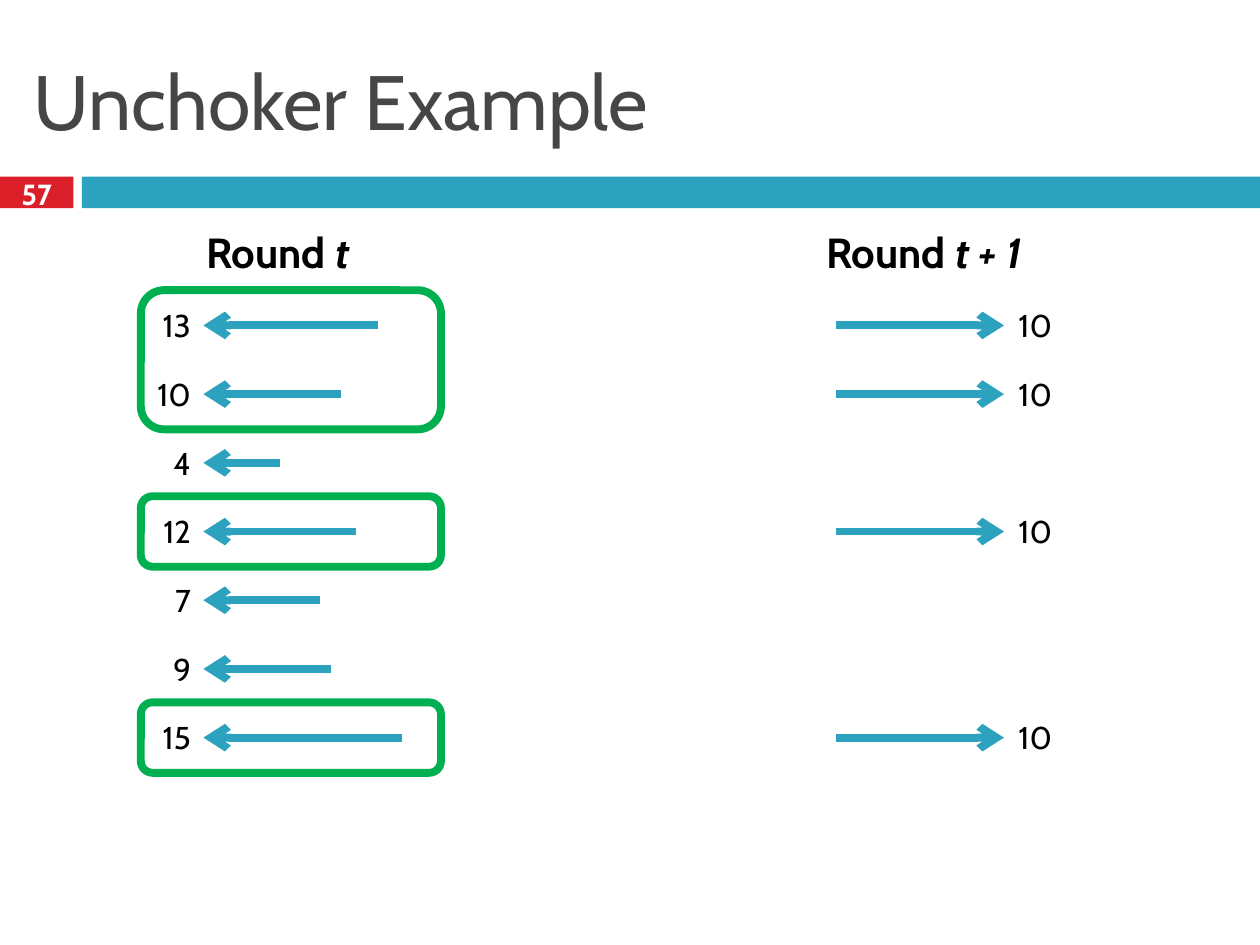
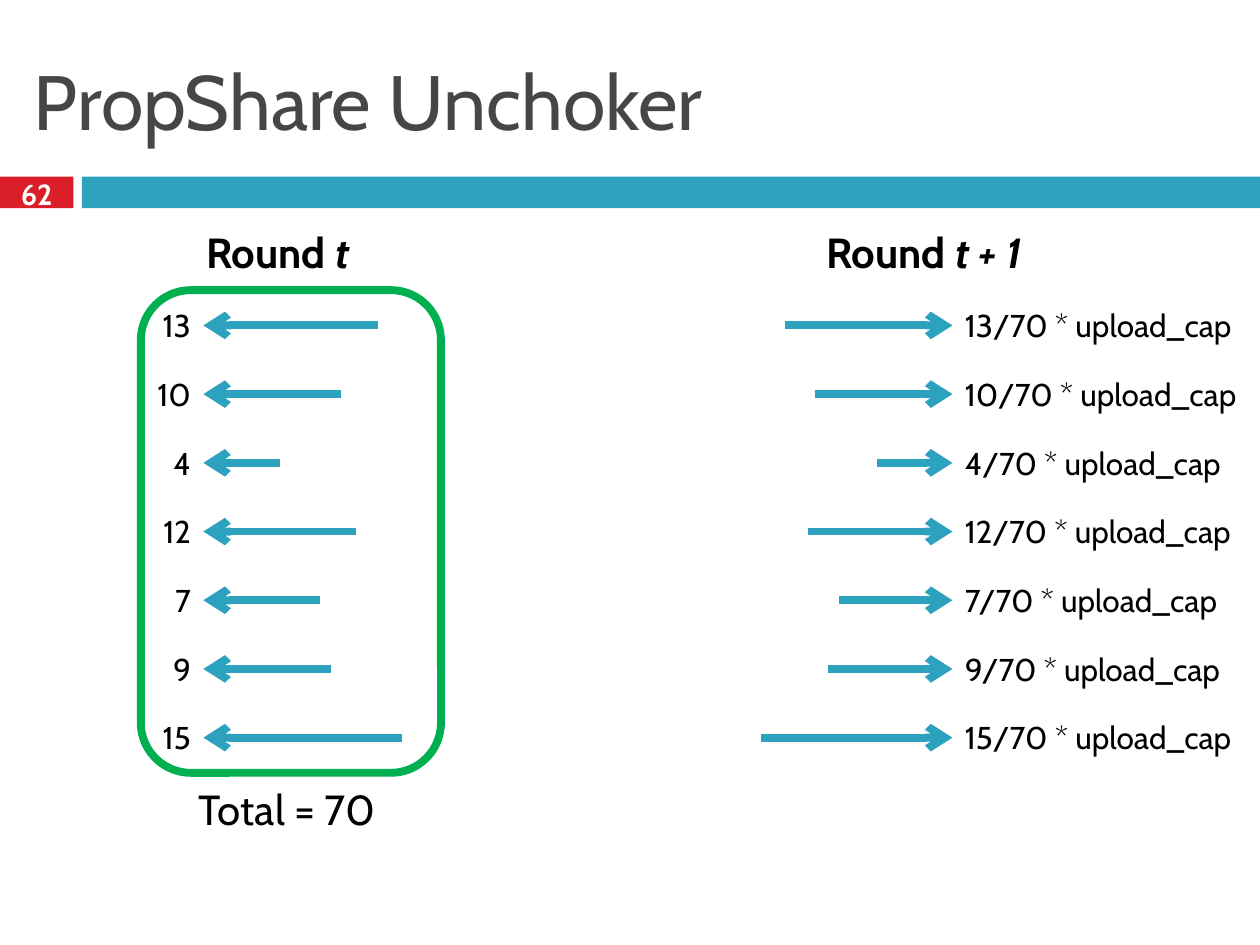
from pptx import Presentation
from pptx.dml.color import RGBColor
from pptx.enum.shapes import MSO_CONNECTOR, MSO_SHAPE
from pptx.enum.text import MSO_ANCHOR, MSO_AUTO_SIZE, PP_ALIGN
from pptx.oxml.ns import qn
from pptx.oxml.xmlchemy import OxmlElement
from pptx.util import Cm, Pt

FONT = "Cabin"
COLORS = {
    "title": "464646",
    "text": "000000",
    "page": "FFFFFF",
    "number_band": "DA1F28",
    "band": "2DA2BF",
    "arrow": "2DA2BF",
    "frame": "00B050",
}

# Received rate of each peer: (incoming, proportional reply) arrow lengths in cm
PEERS = {
    13: (3.53, 3.38),
    10: (2.77, 2.77),
    4: (1.55, 1.52),
    12: (3.07, 2.92),
    7: (2.36, 2.29),
    9: (2.57, 2.51),
    15: (4.01, 3.86),
}
TOTAL = sum(PEERS)
UNCHOKED_ROWS = (0, 1, 3, 6)
EQUAL_RATE = 10
EQUAL_LENGTH = 3.38

FIRST_ROW, ROW_PITCH = 6.56, 1.385
LABEL_HEIGHT = 1.02
INCOMING_EDGE = 4.1
FRAME_LEFT, FRAME_WIDTH, FRAME_MARGIN = 2.84, 6.05, 0.71
BAND_TOP, BAND_HEIGHT, NUMBER_WIDTH = 3.56, 0.64, 1.48


def color(name):
    return RGBColor.from_string(COLORS[name])


def row_y(row):
    return FIRST_ROW + row * ROW_PITCH


def number_width(number):
    return 1.22 if number >= 10 else 0.86


def add_run(paragraph, text, size, color_name="text", bold=False, italic=False):
    run = paragraph.add_run()
    run.text = text
    run.font.name = FONT
    run.font.size = Pt(size)
    run.font.bold = bold
    run.font.italic = italic
    run.font.color.rgb = color(color_name)


def add_label(slide, left, top, width, height, align=PP_ALIGN.LEFT):
    """Add an empty one-line text box; return it with its paragraph."""
    label = slide.shapes.add_textbox(Cm(left), Cm(top), Cm(width), Cm(height))
    label.text_frame.word_wrap = False
    label.text_frame.auto_size = MSO_AUTO_SIZE.SHAPE_TO_FIT_TEXT
    paragraph = label.text_frame.paragraphs[0]
    paragraph.alignment = align
    return label, paragraph


def add_band(slide, left, width, color_name):
    band = slide.shapes.add_shape(
        MSO_SHAPE.RECTANGLE, Cm(left), Cm(BAND_TOP), Cm(width), Cm(BAND_HEIGHT))
    band.shadow.inherit = False
    band.fill.solid()
    band.fill.fore_color.rgb = color(color_name)
    band.line.fill.background()


def add_page_number(slide, number):
    box, paragraph = add_label(slide, 0, 3.48, NUMBER_WIDTH, 0.84, PP_ALIGN.CENTER)
    frame = box.text_frame
    frame.auto_size = MSO_AUTO_SIZE.NONE
    frame.word_wrap = True
    frame.vertical_anchor = MSO_ANCHOR.MIDDLE
    frame.margin_left = frame.margin_right = 0
    frame.margin_top = frame.margin_bottom = 0
    add_run(paragraph, str(number), 16.6, "page", bold=True)


def add_title(slide, text):
    title = slide.shapes.title
    title.left, title.top = Cm(0.43), Cm(0.64)
    title.width, title.height = Cm(24.56), Cm(2.74)
    title.text_frame.auto_size = MSO_AUTO_SIZE.NONE
    title.text_frame.vertical_anchor = MSO_ANCHOR.MIDDLE
    paragraph = title.text_frame.paragraphs[0]
    paragraph.alignment = PP_ALIGN.LEFT
    add_run(paragraph, text, 44, "title")


def add_round_heading(slide, left, width, round_name):
    _, paragraph = add_label(slide, left, 4.45, width, 1.27)
    add_run(paragraph, "Round ", 24, bold=True)
    add_run(paragraph, round_name, 24, bold=True, italic=True)


def add_rate(slide, row, left, width, text, align):
    rate, paragraph = add_label(
        slide, left, row_y(row) - LABEL_HEIGHT / 2, width, LABEL_HEIGHT, align)
    add_run(paragraph, text, 18)
    return rate


def add_arrow(slide, row, start, end, rate, side):
    """Draw a horizontal arrow that ends at the given side of the rate label."""
    y = Cm(row_y(row))
    arrow = slide.shapes.add_connector(MSO_CONNECTOR.STRAIGHT, Cm(start), y, Cm(end), y)
    arrow.end_connect(rate, side)
    arrow.line.color.rgb = color("arrow")
    arrow.line.width = Pt(4.5)
    properties = arrow._element.spPr
    head = OxmlElement("a:tailEnd")
    head.set("type", "arrow")
    properties.find(qn("a:ln")).append(head)
    properties.append(OxmlElement("a:effectLst"))


def add_incoming(slide, row, number, length):
    width = number_width(number)
    rate = add_rate(slide, row, INCOMING_EDGE - width, width, str(number), PP_ALIGN.RIGHT)
    add_arrow(slide, row, INCOMING_EDGE + length, INCOMING_EDGE, rate, 3)


def add_outgoing(slide, row, edge, length, text, width, align):
    rate = add_rate(slide, row, edge, width, text, align)
    add_arrow(slide, row, edge - length, edge, rate, 1)


def add_frame(slide, first_row, last_row):
    """Outline the selected peers from first_row to last_row."""
    top = row_y(first_row) - FRAME_MARGIN
    height = row_y(last_row) + FRAME_MARGIN - top
    frame = slide.shapes.add_shape(
        MSO_SHAPE.ROUNDED_RECTANGLE,
        Cm(FRAME_LEFT), Cm(top), Cm(FRAME_WIDTH), Cm(height))
    frame.shadow.inherit = False
    frame.fill.background()
    frame.line.color.rgb = color("frame")
    frame.line.width = Pt(4.5)


def add_rounds_slide(prs, title, number):
    """Add a slide with bands, title, both round headings and incoming rates."""
    slide = prs.slides.add_slide(prs.slide_layouts[5])
    add_band(slide, 0, NUMBER_WIDTH, "number_band")
    add_band(slide, 1.65, 23.75, "band")
    add_title(slide, title)
    add_page_number(slide, number)
    add_round_heading(slide, 3.91, 3.73, "t")
    add_round_heading(slide, 16.41, 5.18, "t + 1")
    for row, (rate, (length, _)) in enumerate(PEERS.items()):
        add_incoming(slide, row, rate, length)
    return slide


def build_equal_unchoker(prs):
    slide = add_rounds_slide(prs, "Unchoker Example", 57)
    for first_row, last_row in ((0, 1), (3, 3), (6, 6)):
        add_frame(slide, first_row, last_row)
    for row in UNCHOKED_ROWS:
        add_outgoing(slide, row, 20.24, EQUAL_LENGTH, str(EQUAL_RATE),
                     number_width(EQUAL_RATE), PP_ALIGN.RIGHT)


def build_proportional_unchoker(prs):
    slide = add_rounds_slide(prs, "PropShare Unchoker", 62)
    add_frame(slide, 0, len(PEERS) - 1)
    for row, (rate, (_, length)) in enumerate(PEERS.items()):
        add_outgoing(slide, row, 19.2, length, f"{rate}/{TOTAL} * upload_cap",
                     number_width(rate) + 4.83, PP_ALIGN.LEFT)
    _, paragraph = add_label(slide, 3.76, 15.67, 4.24, 1.27)
    add_run(paragraph, f"Total = {TOTAL}", 24)


def main():
    prs = Presentation()
    prs.slide_width, prs.slide_height = Cm(25.4), Cm(19.05)
    build_equal_unchoker(prs)
    build_proportional_unchoker(prs)
    prs.save("out.pptx")


if __name__ == "__main__":
    main()
